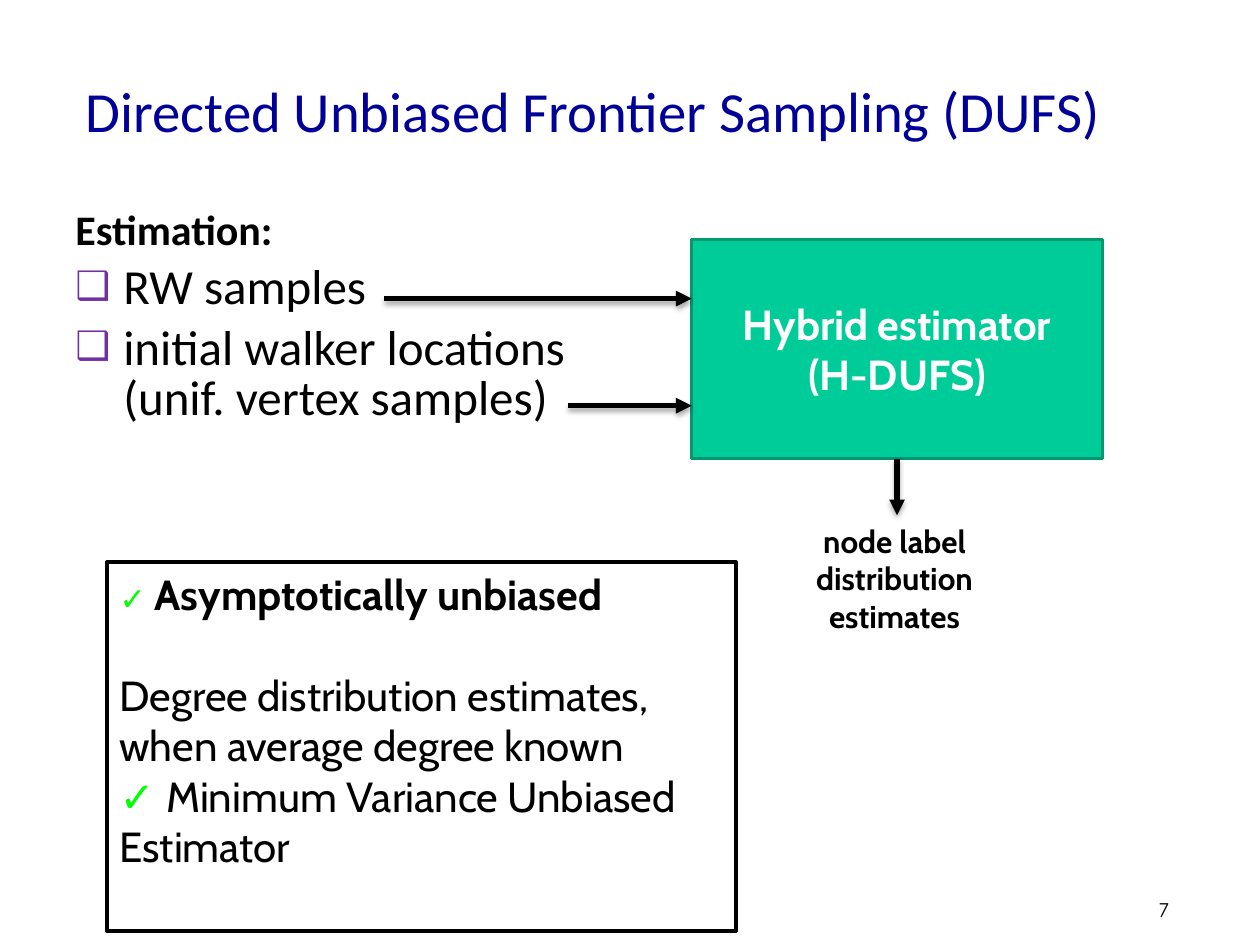
from lxml.etree import SubElement
from pptx import Presentation
from pptx.dml.color import RGBColor
from pptx.enum.shapes import MSO_CONNECTOR, MSO_SHAPE
from pptx.enum.text import MSO_ANCHOR, PP_ALIGN
from pptx.oxml import parse_xml
from pptx.oxml.ns import nsdecls, qn
from pptx.util import Inches, Pt

COLORS = {"title": "000099", "text": "000000", "bullet": "7030A0", "check": "00FF00",
          "green": "00CC99", "green_edge": "009771", "white": "FFFFFF"}

# A span is (text, size, font, color, bold); a paragraph is a list of spans.
TITLE = [("Directed Unbiased Frontier Sampling (DUFS)", 32.4, "Calibri", "title", False)]
INPUTS = [
    [("Estimation:", 24, "Calibri", "text", True)],
    [("RW samples", 28, "Calibri", "text", False)],
    [("initial walker locations\n(unif. vertex samples)", 28, "Calibri", "text", False)],
]
ESTIMATOR = [[("Hybrid estimator\n(H-DUFS)", 24, "Cabin", "white", True)]]
OUTPUT = [[("node label distribution estimates", 18, "Cabin", "text", True)]]
PROPERTIES = [
    [("✓ ", 18, "Arial", "check", True),
     ("Asymptotically unbiased", 24, "Cabin", "text", True)],
    [("Degree distribution estimates, when average degree known\n", 24, "Cabin", "text", False),
     ("✓ ", 24, "Arial", "check", True),
     ("Minimum Variance Unbiased Estimator", 24, "Cabin", "text", False)],
]
PAGE_NUMBER = [[("7", 12, "Comic Neue", "text", False)]]

# Left, top, width, height in inches
TITLE_AREA = (0.58, 0.25, 8.5, 1.25)
INPUT_AREA = (0.5, 1.63, 4.32, 2.46)
ESTIMATOR_AREA = (5.49, 1.9, 3.26, 1.74)
OUTPUT_AREA = (6.13, 4.09, 1.94, 1.05)
PROPERTY_AREA = (0.85, 4.46, 4.99, 2.93)
NUMBER_AREA = (9.1, 7.07, 0.74, 0.3)
INPUT_ARROWS = [(3.05, 2.37), (4.51, 3.22)]  # start points
BULLET_INDENT = 0.38


def color(name):
    return RGBColor.from_string(COLORS[name])


def add_spans(para, spans):
    for text, size, font, ink, bold in spans:
        for index, line in enumerate(text.split("\n")):
            if index:
                para.add_line_break()
            if line:
                span = para.add_run()
                span.text = line
                span.font.size, span.font.name, span.font.bold = Pt(size), font, bold
                span.font.color.rgb = color(ink)


def fill_text(shape, paragraphs, align=PP_ALIGN.LEFT, anchor=MSO_ANCHOR.TOP):
    frame = shape.text_frame
    frame.word_wrap = True
    frame.vertical_anchor = anchor
    for index, spans in enumerate(paragraphs):
        para = frame.add_paragraph() if index else frame.paragraphs[0]
        para.alignment = align
        add_spans(para, spans)
    return frame.paragraphs


def add_text(page, area, paragraphs, **layout):
    box = page.shapes.add_textbox(*map(Inches, area))
    return fill_text(box, paragraphs, **layout)


def add_panel(page, area, fill, edge, paragraphs, **layout):
    panel = page.shapes.add_shape(MSO_SHAPE.RECTANGLE, *map(Inches, area))
    panel.shadow.inherit = False
    panel.fill.solid()
    panel.fill.fore_color.rgb = color(fill)
    panel.line.color.rgb = color(edge)
    panel.line.width = Pt(2)
    return fill_text(panel, paragraphs, **layout)


def add_bullet(para):
    props = para._p.get_or_add_pPr()
    props.set("marL", str(Inches(BULLET_INDENT)))
    props.set("indent", str(-Inches(BULLET_INDENT)))
    SubElement(SubElement(props, qn("a:buClr")), qn("a:srgbClr"), val=COLORS["bullet"])
    SubElement(props, qn("a:buSzPct"), val="80000")
    SubElement(props, qn("a:buFont"), typeface="Arial")
    SubElement(props, qn("a:buChar"), char="❑")


def add_arrow(page, start, end):
    arrow = page.shapes.add_connector(MSO_CONNECTOR.STRAIGHT, *map(Inches, start + end))
    arrow.line.color.rgb = color("text")
    arrow.line.width = Pt(3)
    SubElement(arrow.line._ln, qn("a:tailEnd"), type="triangle")
    arrow._element.spPr.append(parse_xml(
        f'<a:effectLst {nsdecls("a")}>'
        f'<a:outerShdw blurRad="{Pt(3.1)}" dist="{Pt(1.8)}" dir="5400000" rotWithShape="0">'
        f'<a:srgbClr val="{COLORS["text"]}"><a:alpha val="35000"/></a:srgbClr>'
        '</a:outerShdw></a:effectLst>'))


def main():
    deck = Presentation()
    deck.slide_width, deck.slide_height = Inches(10), Inches(7.5)
    page = deck.slides.add_slide(deck.slide_layouts[5])

    title = page.shapes.title
    title.left, title.top, title.width, title.height = map(Inches, TITLE_AREA)
    fill_text(title, [TITLE], anchor=MSO_ANCHOR.MIDDLE)

    inputs = add_text(page, INPUT_AREA, INPUTS)
    for index, para in enumerate(inputs):
        para.line_spacing = 0.85
        if index:
            para.space_before = Pt(6)
            add_bullet(para)

    add_panel(page, ESTIMATOR_AREA, "green", "green_edge", ESTIMATOR,
              align=PP_ALIGN.CENTER, anchor=MSO_ANCHOR.MIDDLE)
    left, top, width, height = ESTIMATOR_AREA
    for start in INPUT_ARROWS:
        add_arrow(page, start, (left, start[1]))
    middle = left + width / 2
    add_arrow(page, (middle, top + height), (middle, OUTPUT_AREA[1]))
    add_text(page, OUTPUT_AREA, OUTPUT, align=PP_ALIGN.CENTER)

    properties = add_panel(page, PROPERTY_AREA, "white", "text", PROPERTIES)
    properties[1].space_before = Pt(29)
    add_text(page, NUMBER_AREA, PAGE_NUMBER)

    deck.save("out.pptx")


if __name__ == "__main__":
    main()
